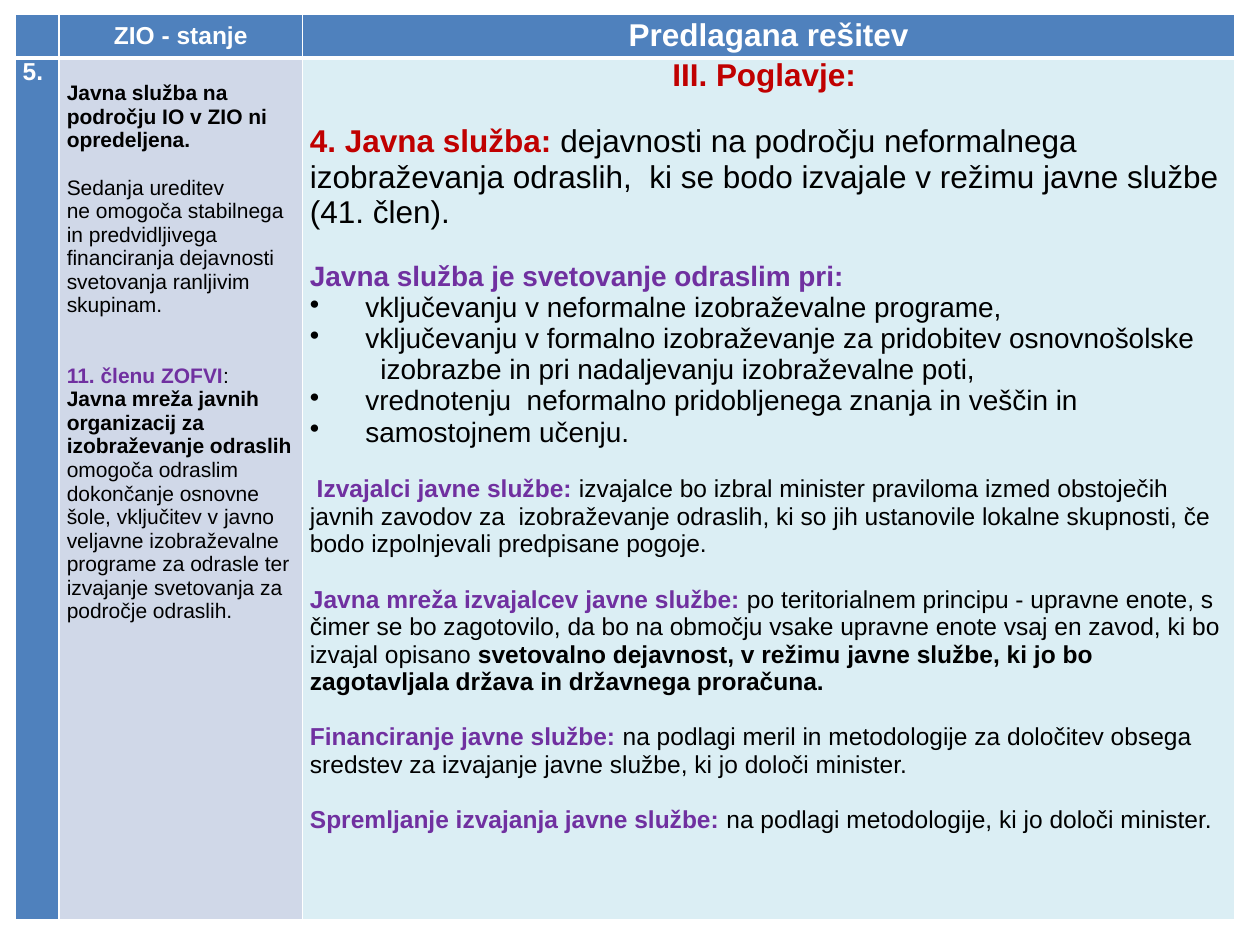
"""Build the slide comparing the current ZIO state with the proposed solution."""
from dataclasses import dataclass

from lxml import etree
from pptx import Presentation
from pptx import util as u
from pptx.dml.color import RGBColor
from pptx.enum import text
from pptx.oxml import ns

WHITE = RGBColor(0xFF, 0xFF, 0xFF)
BLACK = RGBColor(0x00, 0x00, 0x00)
RED = RGBColor(0xC0, 0x00, 0x00)
PURPLE = RGBColor(0x70, 0x30, 0xA0)
BLUE = RGBColor(0x4F, 0x81, 0xBD)
LAVENDER = RGBColor(0xD0, 0xD8, 0xE8)
AQUA = RGBColor(0xDB, 0xEE, 0xF4)

FONT = "Arial"
CENTER = text.PP_ALIGN.CENTER
LEFT = text.PP_ALIGN.LEFT
THIN, THICK = 1, 3
COLUMN_WIDTHS = (0.35, 1.93, 7.4)
ROW_HEIGHTS = (0.35, 6.84)
BULLET_INDENT = 0.44


@dataclass(frozen=True)
class Span:
    words: str
    color: RGBColor = BLACK
    bold: bool = False


@dataclass(frozen=True)
class Para:
    size: int
    spans: tuple[Span, ...]
    before: float = 0
    align: text.PP_ALIGN = LEFT
    indent: float = 0
    bullet: bool = False


@dataclass(frozen=True)
class Content:
    fill: RGBColor
    paras: tuple[Para, ...] = ()
    top: float = 0


def header(words: str, size: int) -> Content:
    return Content(BLUE, (Para(size, (Span(words, WHITE, True),), align=CENTER),))


def state(*spans: Span, before: float = 0) -> Para:
    return Para(12, spans, before)


def goal(words: str, bullet: bool = True) -> Para:
    indent = BULLET_INDENT if bullet else 0.56
    return Para(16, (Span(words),), indent=indent, bullet=bullet)


def topic(title: str, *rest: Span) -> Para:
    return Para(14, (Span(title, PURPLE, True), *rest), before=15.8)


CURRENT_STATE = (
    state(Span("Javna služba na področju IO v ZIO ni opredeljena.", bold=True)),
    state(Span("Sedanja ureditev"), before=13.5),
    state(Span("ne omogoča stabilnega in predvidljivega financiranja dejavnosti "
               "svetovanja ranljivim skupinam.")),
    state(Span("11. členu ZOFVI", PURPLE, True), Span(":"), before=27),
    state(Span("Javna mreža javnih organizacij za izobraževanje odraslih ", bold=True),
          Span("omogoča odraslim dokončanje osnovne šole, vključitev v javno veljavne "
               "izobraževalne programe za odrasle ter izvajanje svetovanja za "
               "področje odraslih.")),
)

SOLUTION = (
    Para(18, (Span("III. Poglavje: ", RED, True),), align=CENTER),
    Para(18, (Span("4. Javna služba: ", RED, True),
              Span("dejavnosti na področju neformalnega izobraževanja odraslih,  ki se "
                   "bodo izvajale v režimu javne službe (41. člen).")), before=17.8),
    Para(16, (Span("Javna služba je svetovanje odraslim pri:", PURPLE, True),),
         before=17.8),
    goal("vključevanju v neformalne izobraževalne programe,"),
    goal("vključevanju v formalno izobraževanje za pridobitev osnovnošolske"),
    goal("izobrazbe in pri nadaljevanju izobraževalne poti,", bullet=False),
    goal("vrednotenju  neformalno pridobljenega znanja in veščin in"),
    goal("samostojnem učenju."),
    topic(" Izvajalci javne službe: ",
          Span("izvajalce bo izbral minister praviloma izmed obstoječih javnih zavodov "
               "za  izobraževanje odraslih, ki so jih ustanovile lokalne skupnosti, če "
               "bodo izpolnjevali predpisane pogoje.")),
    topic("Javna mreža izvajalcev javne službe: ",
          Span("po teritorialnem principu - upravne enote, s čimer se bo zagotovilo, da "
               "bo na območju vsake upravne enote vsaj en zavod, ki bo izvajal opisano "),
          Span("svetovalno dejavnost, v režimu javne službe, ki jo bo zagotavljala "
               "država in državnega proračuna.", bold=True)),
    topic("Financiranje javne službe:",
          Span(" na podlagi meril in metodologije za določitev obsega sredstev za "
               "izvajanje javne službe, ki jo določi minister.")),
    topic("Spremljanje izvajanja javne službe:",
          Span(" na podlagi metodologije, ki jo določi minister.")),
)

ROWS = (
    (Content(BLUE), header("ZIO - stanje", 14), header("Predlagana rešitev", 18)),
    (Content(BLUE, (Para(14, (Span("5.", WHITE, True),)),)),
     Content(LAVENDER, CURRENT_STATE, top=0.19),
     Content(AQUA, SOLUTION)),
)


def set_borders(cell, top: int, bottom: int) -> None:
    properties = cell._tc.get_or_add_tcPr()
    widths = {"a:lnL": THIN, "a:lnR": THIN, "a:lnT": top, "a:lnB": bottom}
    for position, (tag, width) in enumerate(widths.items()):
        line = etree.Element(ns.qn(tag), w=str(u.Pt(width)))
        fill = etree.SubElement(line, ns.qn("a:solidFill"))
        etree.SubElement(fill, ns.qn("a:srgbClr"), val=str(WHITE))
        properties.insert(position, line)


def set_indent(paragraph, para: Para) -> None:
    properties = paragraph._p.get_or_add_pPr()
    properties.set("marL", str(u.Inches(para.indent)))
    if para.bullet:
        properties.set("indent", str(-u.Inches(para.indent)))
        bullet = etree.Element(ns.qn("a:buChar"), char="•")
        properties.find(ns.qn("a:defRPr")).addprevious(bullet)


def write_para(paragraph, para: Para) -> None:
    paragraph.alignment = para.align
    paragraph.space_before = u.Pt(para.before)
    paragraph.font.name = FONT
    paragraph.font.size = u.Pt(para.size)
    set_indent(paragraph, para)
    for span in para.spans:
        run = paragraph.add_run()
        run.text = span.words
        run.font.bold = span.bold
        run.font.color.rgb = span.color


def fill_cell(cell, content: Content, is_header: bool) -> None:
    cell.fill.solid()
    cell.fill.fore_color.rgb = content.fill
    cell.margin_left = cell.margin_right = u.Inches(0.06)
    cell.margin_top, cell.margin_bottom = u.Inches(content.top), 0
    cell.vertical_anchor = text.MSO_ANCHOR.MIDDLE if is_header else text.MSO_ANCHOR.TOP
    set_borders(cell, *((THIN, THICK) if is_header else (THICK, THIN)))
    frame = cell.text_frame
    for index, para in enumerate(content.paras):
        write_para(frame.add_paragraph() if index else frame.paragraphs[0], para)


def main() -> None:
    deck = Presentation()
    deck.slide_width, deck.slide_height = u.Inches(10), u.Inches(7.5)
    slide = deck.slides.add_slide(deck.slide_layouts[6])
    comparison = slide.shapes.add_table(
        len(ROWS), len(COLUMN_WIDTHS), u.Inches(0.12), u.Inches(0.11),
        u.Inches(sum(COLUMN_WIDTHS)), u.Inches(sum(ROW_HEIGHTS))).table
    for column, width in zip(comparison.columns, COLUMN_WIDTHS):
        column.width = u.Inches(width)
    for row, height, contents in zip(comparison.rows, ROW_HEIGHTS, ROWS):
        row.height = u.Inches(height)
        for cell, content in zip(row.cells, contents):
            fill_cell(cell, content, is_header=contents is ROWS[0])
    deck.save("out.pptx")


if __name__ == "__main__":
    main()
